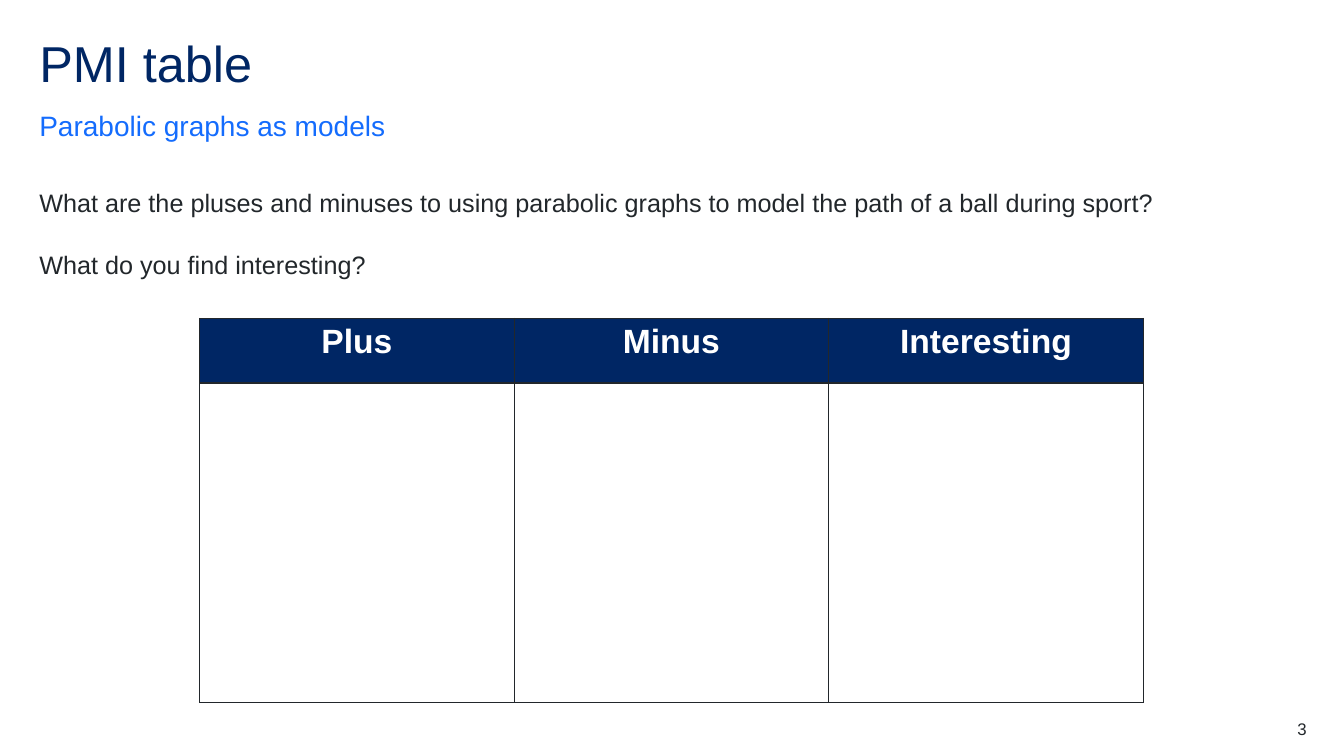
from dataclasses import dataclass

from lxml.etree import SubElement
from pptx import Presentation
from pptx.dml.color import RGBColor
from pptx.enum.text import MSO_ANCHOR as Anchor, MSO_AUTO_SIZE as AutoSize, PP_ALIGN as Align
from pptx.oxml.ns import qn
from pptx.util import Emu, Pt

EMU_PER_PX = 9144
MARGIN, TEXT_WIDTH = 39, 1256


@dataclass(frozen=True)
class Theme:
    """Colours, type sizes and font of the deck."""
    font: str = "Arial"
    navy: str = "002664"
    blue: str = "146CFD"
    ink: str = "22272B"
    white: str = "FFFFFF"
    title: int = 36
    heading: int = 24
    subtitle: int = 20
    body: int = 18
    number: int = 12


THEME = Theme()


def px(length):
    """Turn a length in px into EMU."""
    return Emu(length * EMU_PER_PX)


def write(frame, *lines, size, color, bold=False, align=Align.LEFT, spacing=1.0, after=0):
    """Write formatted paragraphs into a text frame."""
    for index, line in enumerate(lines):
        para = frame.add_paragraph() if index else frame.paragraphs[0]
        para.alignment = align
        para.line_spacing = spacing
        para.space_before = Pt(0)
        para.space_after = Pt(after)
        span = para.add_run()
        span.text = line
        span.font.name = THEME.font
        span.font.size = Pt(size)
        span.font.bold = bold
        span.font.color.rgb = RGBColor.from_string(color)


def place_text(box, left, top, width, height, *lines, anchor=Anchor.TOP, **style):
    """Place a text shape without insets and fill it with paragraphs."""
    box.left, box.top, box.width, box.height = map(px, (left, top, width, height))
    frame = box.text_frame
    frame.word_wrap = True
    frame.auto_size = AutoSize.NONE
    frame.vertical_anchor = anchor
    frame.margin_left = frame.margin_top = frame.margin_right = frame.margin_bottom = 0
    write(frame, *lines, **style)


def add_text(page, *args, **style):
    """Add a text box to the page."""
    place_text(page.shapes.add_textbox(0, 0, 0, 0), *args, **style)


def style_cell(cell, fill):
    """Give a cell thin borders on all sides and a solid fill."""
    properties = cell._tc.get_or_add_tcPr()
    for side in ("lnL", "lnR", "lnT", "lnB"):
        border = SubElement(properties, qn(f"a:{side}"), w=str(Pt(1)))
        paint = SubElement(border, qn("a:solidFill"))
        SubElement(paint, qn("a:srgbClr"), val=THEME.ink)
    cell.fill.solid()
    cell.fill.fore_color.rgb = RGBColor.from_string(fill)


def add_blank_table(page, left, top, column_width, row_heights, headings):
    """Add a table with a heading row above empty cells."""
    width, height = column_width * len(headings), sum(row_heights)
    table = page.shapes.add_table(
        len(row_heights), len(headings), px(left), px(top), px(width), px(height)).table
    table.first_row = table.horz_banding = False
    for column in table.columns:
        column.width = px(column_width)
    for row, row_height in zip(table.rows, row_heights):
        row.height = px(row_height)
    for cell in table.iter_cells():
        style_cell(cell, THEME.white)
    for cell, heading in zip(table.rows[0].cells, headings):
        cell.fill.fore_color.rgb = RGBColor.from_string(THEME.navy)
        write(cell.text_frame, heading, size=THEME.heading, color=THEME.white,
              bold=True, align=Align.CENTER)


def main():
    """Build the PMI table slide."""
    deck = Presentation()
    deck.slide_width, deck.slide_height = px(1333), px(750)
    page = deck.slides.add_slide(deck.slide_layouts[5])
    place_text(page.shapes.title, MARGIN, 39, TEXT_WIDTH, 60, "PMI table",
               size=THEME.title, color=THEME.navy, spacing=0.9)
    add_text(page, MARGIN, 107, TEXT_WIDTH, 34, "Parabolic graphs as models",
             anchor=Anchor.BOTTOM, size=THEME.subtitle, color=THEME.blue,
             spacing=1.5, after=12)
    add_text(page, MARGIN, 171, TEXT_WIDTH, 115,
             "What are the pluses and minuses to using parabolic graphs "
             "to model the path of a ball during sport?",
             "What do you find interesting?",
             size=THEME.body, color=THEME.ink, spacing=1.5, after=12)
    add_blank_table(page, 198, 316, 312, (64, 317), ("Plus", "Minus", "Interesting"))
    add_text(page, 1217, 713, 79, 20, "3",
             size=THEME.number, color=THEME.ink, align=Align.RIGHT)
    deck.save("out.pptx")


if __name__ == "__main__":
    main()
